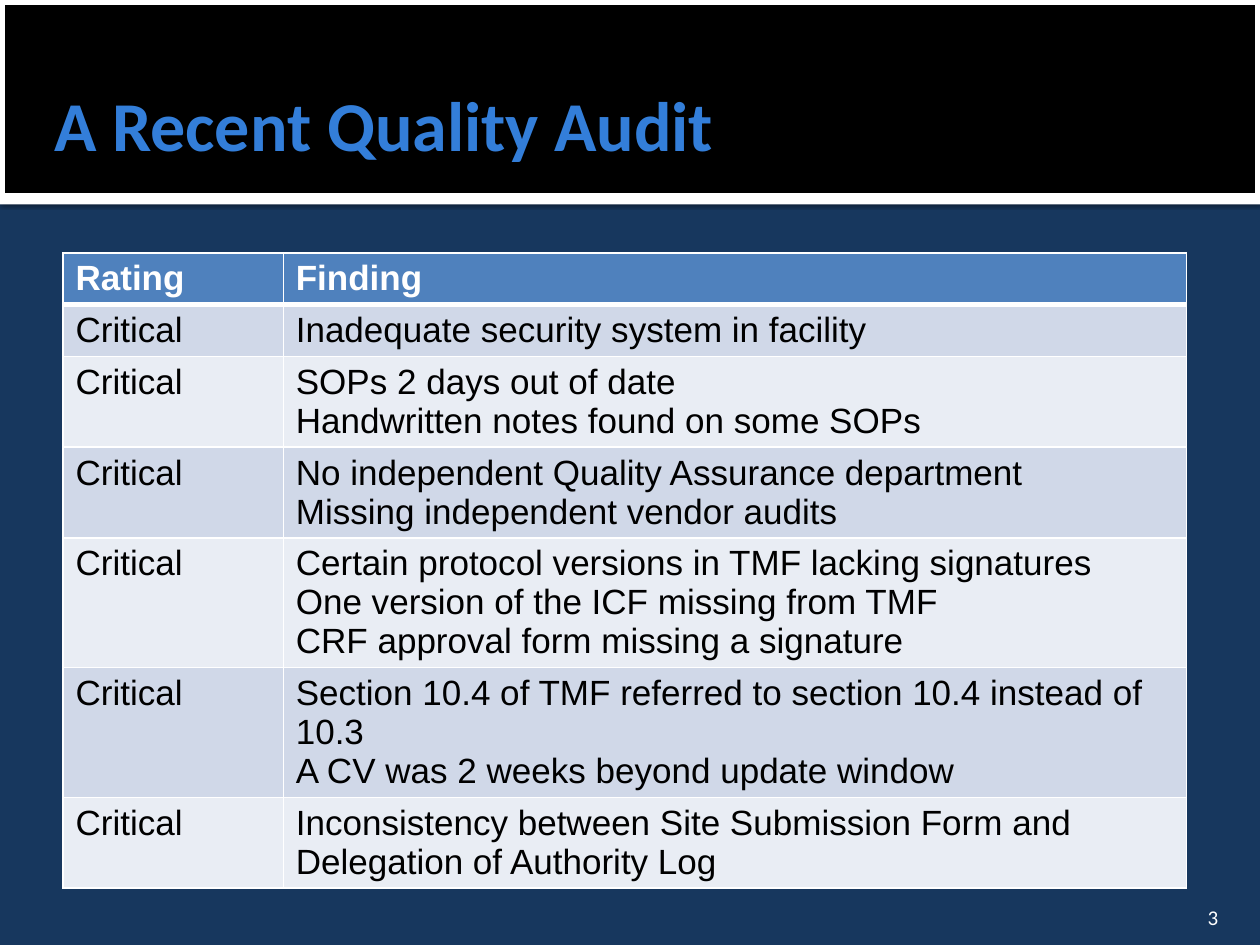
from lxml.etree import SubElement
from pptx import Presentation
from pptx.dml.color import RGBColor
from pptx.enum.shapes import MSO_SHAPE as Shape
from pptx.enum.text import MSO_ANCHOR as Anchor, PP_ALIGN as Align
from pptx.oxml import parse_xml
from pptx.oxml.ns import nsdecls, qn
from pptx.util import Cm, Pt

TITLE = "A Recent Quality Audit"
HEADER = ("Rating", ["Finding"])
FINDINGS = [
    ("Critical", ["Inadequate security system in facility"]),
    ("Critical", ["SOPs 2 days out of date",
                  "Handwritten notes found on some SOPs"]),
    ("Critical", ["No independent Quality Assurance department",
                  "Missing independent vendor audits"]),
    ("Critical", ["Certain protocol versions in TMF lacking signatures",
                  "One version of the ICF missing from TMF",
                  "CRF approval form missing a signature"]),
    ("Critical", ["Section 10.4 of TMF referred to section 10.4 instead of 10.3",
                  "A CV was 2 weeks beyond update window"]),
    ("Critical", ["Inconsistency between Site Submission Form and "
                  "Delegation of Authority Log"]),
]
PAGE = "3"
COL_WIDTHS = (4.44, 18.21)
ROW_HEIGHT = 1.04
WHITE, BLACK, NAVY = "FFFFFF", "000000", "17375E"
BLUE, HEAD_FILL = "337ED9", "4F81BD"
BANDS = ("D0D8E8", "E9EDF4")


def rgb(value):
    return RGBColor.from_string(value)


def paint(fill, color):
    fill.solid()
    fill.fore_color.rgb = rgb(color)


def write(tf, lines, size, font, color, bold=False, align=Align.LEFT):
    for i, line in enumerate(lines):
        p = tf.paragraphs[0] if i == 0 else tf.add_paragraph()
        p.alignment = align
        r = p.add_run()
        r.text = line
        r.font.size = Pt(size)
        r.font.name = font
        r.font.bold = bold
        r.font.color.rgb = rgb(color)


def place(sp, left, top, width, height):
    sp.left, sp.top, sp.width, sp.height = map(Cm, (left, top, width, height))


def frame(tf, anchor, left, top, right, bottom):
    tf.word_wrap = True
    tf.vertical_anchor = anchor
    tf.margin_left, tf.margin_top = Cm(left), Cm(top)
    tf.margin_right, tf.margin_bottom = Cm(right), Cm(bottom)


def add_band(slide, top, height, color):
    sp = slide.shapes.add_shape(Shape.RECTANGLE, 0, Cm(top), Cm(25.4), Cm(height))
    sp.shadow.inherit = False
    paint(sp.fill, color)
    sp.line.fill.background()
    return sp


def add_shadow(sp):
    effects = sp._element.spPr.find(qn("a:effectLst"))
    effects.append(parse_xml(
        f'<a:outerShdw {nsdecls("a")} blurRad="{Pt(2.5)}" dist="{Pt(0.8)}" '
        'dir="5400000" rotWithShape="0"><a:srgbClr val="000000">'
        '<a:alpha val="60000"/></a:srgbClr></a:outerShdw>'))


def add_borders(cell, bottom):
    tcPr = cell._tc.get_or_add_tcPr()
    for i, (side, width) in enumerate(zip("LRTB", (1, 1, 1, bottom))):
        ln = SubElement(tcPr, qn(f"a:ln{side}"), w=str(Pt(width)))
        SubElement(SubElement(ln, qn("a:solidFill")), qn("a:srgbClr"), val=WHITE)
        tcPr.insert(i, ln)


def add_findings(slide):
    rows = [HEADER] + FINDINGS
    table = slide.shapes.add_table(
        len(rows), len(COL_WIDTHS), Cm(1.27), Cm(5.1),
        Cm(sum(COL_WIDTHS)), Cm(ROW_HEIGHT * len(rows))).table
    for col, width in zip(table.columns, COL_WIDTHS):
        col.width = Cm(width)
    for i, (rating, lines) in enumerate(rows):
        head = i == 0
        table.rows[i].height = Cm(ROW_HEIGHT)
        for j, content in enumerate(([rating], lines)):
            cell = table.cell(i, j)
            paint(cell.fill, HEAD_FILL if head else BANDS[(i - 1) % 2])
            add_borders(cell, 3 if head else 1)
            write(cell.text_frame, content, 20, "Arial",
                  WHITE if head else BLACK, head)


def main():
    prs = Presentation()
    prs.slide_width, prs.slide_height = Cm(25.4), Cm(19.05)
    slide = prs.slides.add_slide(prs.slide_layouts[5])
    paint(slide.background.fill, NAVY)

    add_shadow(add_band(slide, 3.99, 0.13, WHITE))
    banner = add_band(slide, 0, 3.99, BLACK)
    paint(banner.line.fill, WHITE)
    banner.line.width = Pt(6)

    title = slide.shapes.title
    slide.shapes._spTree.append(title._element)
    place(title, 0.84, 0.76, 20.96, 3.48)
    frame(title.text_frame, Anchor.MIDDLE, 0.25, 0.13, 0.13, 0.13)
    write(title.text_frame, [TITLE], 40, "Calibri", BLUE, True)

    add_findings(slide)

    number = slide.shapes.add_textbox(Cm(22.78), Cm(17.98), Cm(2.03), Cm(0.76))
    frame(number.text_frame, Anchor.BOTTOM, 0.25, 0.13, 0.25, 0)
    write(number.text_frame, [PAGE], 12, "Calibri", WHITE, align=Align.RIGHT)

    prs.save("out.pptx")


if __name__ == "__main__":
    main()
